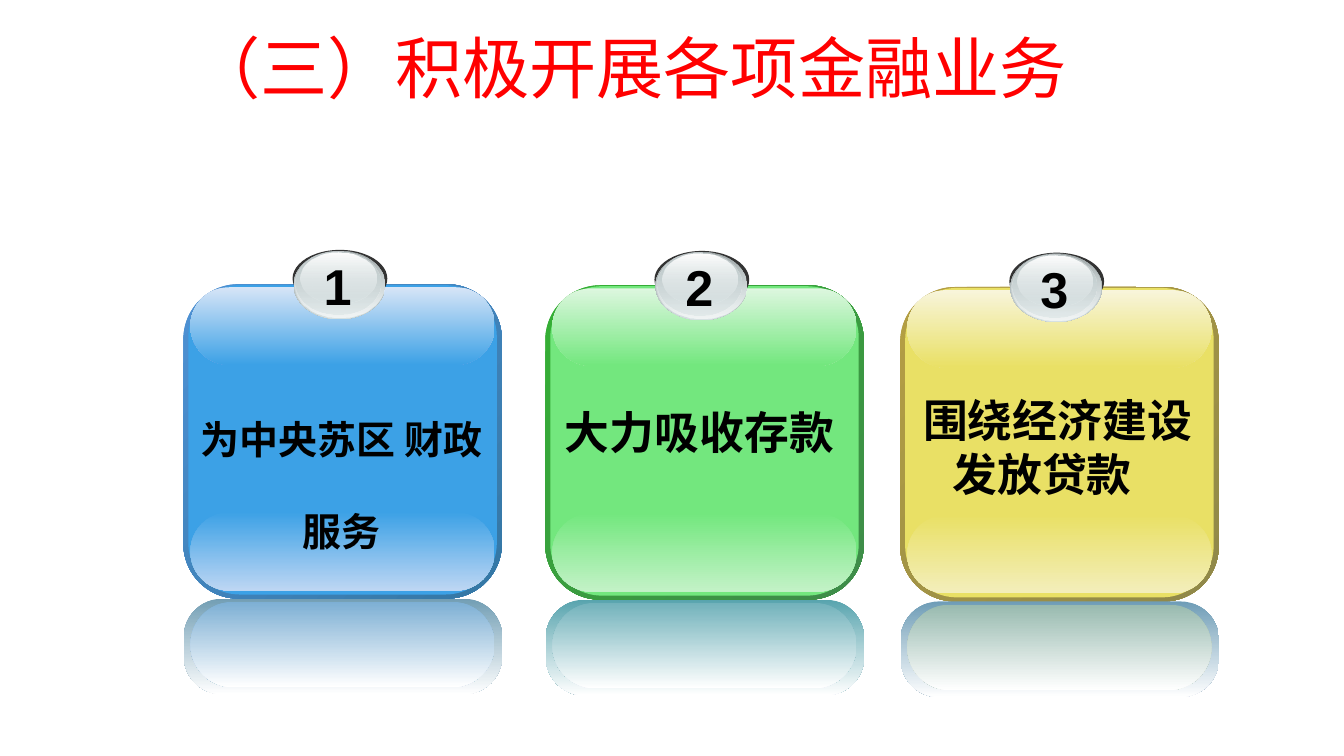
"""Build a slide with three glossy numbered cards on banking work."""
from pptx import Presentation
from pptx.dml.color import RGBColor
from pptx.enum.shapes import MSO_SHAPE
from pptx.enum.text import MSO_ANCHOR, MSO_AUTO_SIZE, PP_ALIGN
from pptx.oxml.ns import qn
from pptx.util import Pt
from lxml.etree import SubElement


def layer(group, kind, box, hues, angle=90, round=None, alphas=()):
    shape = group.shapes.add_shape(kind, *[Pt(v) for v in box])
    shape.shadow.inherit = False
    shape.line.fill.background()
    if round is not None:
        shape.adjustments[0] = round
    if len(hues) == 1:
        shape.fill.solid()
        shape.fill.fore_color.rgb = RGBColor.from_string(hues[0])
        return
    shape.fill.gradient()
    shape.fill.gradient_angle = 360 - angle
    for stop, hue in zip(shape.fill.gradient_stops, hues):
        stop.color.rgb = RGBColor.from_string(hue)
    tones = shape.element.spPr.findall(".//" + qn("a:srgbClr"))
    for tone, alpha in zip(tones, alphas):
        SubElement(tone, qn("a:alpha"), val=str(alpha * 1000))


def write(frame, text, size, face, hue="000000", bold=True):
    para = frame.paragraphs[0]
    run = para.add_run()
    run.text = text
    run.font.size = Pt(size)
    run.font.bold = bold
    run.font.name = face
    run.font.color.rgb = RGBColor.from_string(hue)
    SubElement(run.font._element, qn("a:ea"), typeface=face)
    return para


deck = Presentation()
deck.slide_width, deck.slide_height = Pt(960), Pt(540)
slide = deck.slides.add_slide(deck.slide_layouts[5])

title = slide.shapes.title
title.left, title.top, title.width, title.height = Pt(131), Pt(21.6), Pt(781), Pt(90)
title.text_frame.word_wrap = True
title.text_frame.auto_size = MSO_AUTO_SIZE.NONE
title.text_frame.vertical_anchor = MSO_ANCHOR.TOP
head = write(title.text_frame, "（三）积极开展各项金融业务", 48, "Arial", "FF0000", False)
head.alignment = PP_ALIGN.LEFT
head.line_spacing = 0.9

cards = [
    (131, 203, "4E91D4 3477A4 3CA1E6 BDD6F3 D7E5F7 729EB4 7DAFD4",
     "为中央苏区 财政服务", 48, "Noto Sans CJK SC", 5, 58.4),
    (389.5, 203.75, "34B034 3F8B4A 73E77E C3F2C7 DDF7DF 58A4AE 72B2BB",
     "大力吸收存款", 32, "DejaVu Sans", 2.2, 82.1),
    (643, 205, "B59F43 8F8849 E9E065 F3EEBB F8F5DB 6F9DB7 98BAAF",
     "围绕经济建设发放贷款", 32, "DejaVu Sans", 4.3, 72.2),
]
badge = [
    (78, -24.5, 67.7, 41, ["333333"], ()),
    (78.7, -24, 65.5, 49, ["99A1A2", "D6E1E2"], ()),
    (79.4, -23.7, 64, 47.5, ["D6E1E2", "F2F5F5"], (0, 100)),
    (80, -23, 60.5, 44.6, ["C1CBCC", "D6E1E2"], (100, 48)),
    (83.6, -22.3, 54, 36, ["FFFFFF", "D6E1E2"], (100, 38)),
]

for num, (left, top, hues, text, size, face, dx, dy) in enumerate(cards, 1):
    dark, deep, main, low, high, rim, glow = hues.split()
    group = slide.shapes.add_group_shape()
    panels = [
        (0, 0, 227.5, 224.6, [dark, deep], 45, 0.175),
        (3.6, 0.7, 220.3, 221, [main], 0, 0.167),
        (5, 162.7, 217.4, 56.2, [main, low], 90, 0.5),
        (5, 2.2, 217.4, 55.4, [high, main], 90, 0.5),
        (0.3, 224.6, 227.5, 68.4, [rim, "FFFFFF"], 90, 0.404),
        (5, 226.8, 217.4, 61.2, [glow, "FFFFFF"], 90, 0.5),
    ]
    for x, y, wide, high, tones, angle, round in panels:
        layer(group, MSO_SHAPE.ROUNDED_RECTANGLE, (left + x, top + y, wide, high),
              tones, angle, round)
    for x, y, wide, high, tones, alphas in badge:
        layer(group, MSO_SHAPE.OVAL, (left + x, top + y, wide, high), tones, alphas=alphas)

    label = group.shapes.add_textbox(Pt(left + 93), Pt(top - 24.5), Pt(34.5), Pt(51))
    label.text_frame.word_wrap = False
    write(label.text_frame, str(num), 36, "Arial")

    body = group.shapes.add_textbox(Pt(left + dx), Pt(top + dy), Pt(216), Pt(47.5 if num == 2 else 85))
    body.text_frame.word_wrap = True
    para = write(body.text_frame, text, size, face)
    para.alignment = PP_ALIGN.CENTER
    if num == 1:
        para.runs[0].font._element.set("baseline", "-25000")
    if num == 3:
        para.alignment = PP_ALIGN.LEFT
        props = para._p.get_or_add_pPr()
        props.set("marL", str(Pt(26)))
        props.set("indent", str(-Pt(21)))

deck.save("out.pptx")
